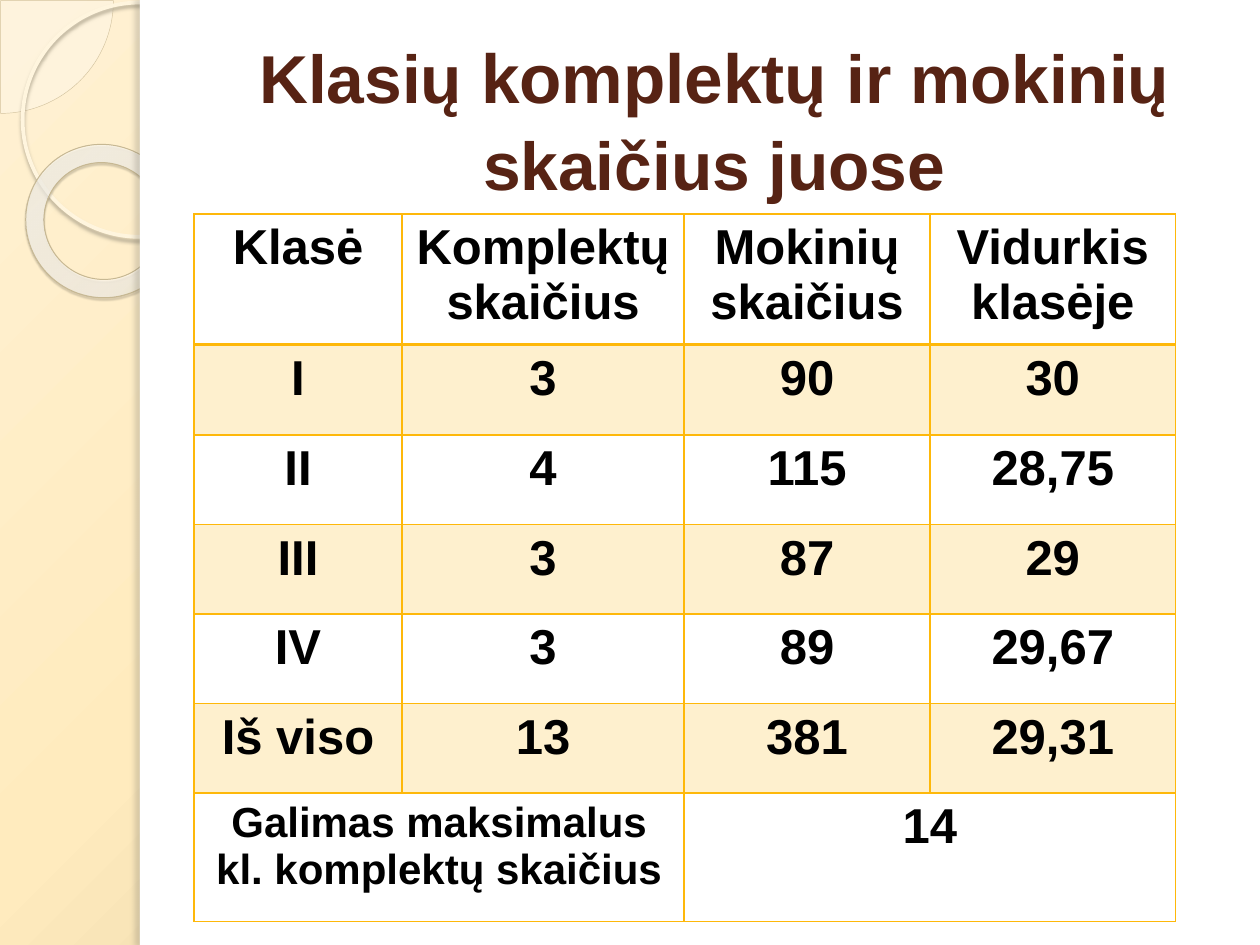
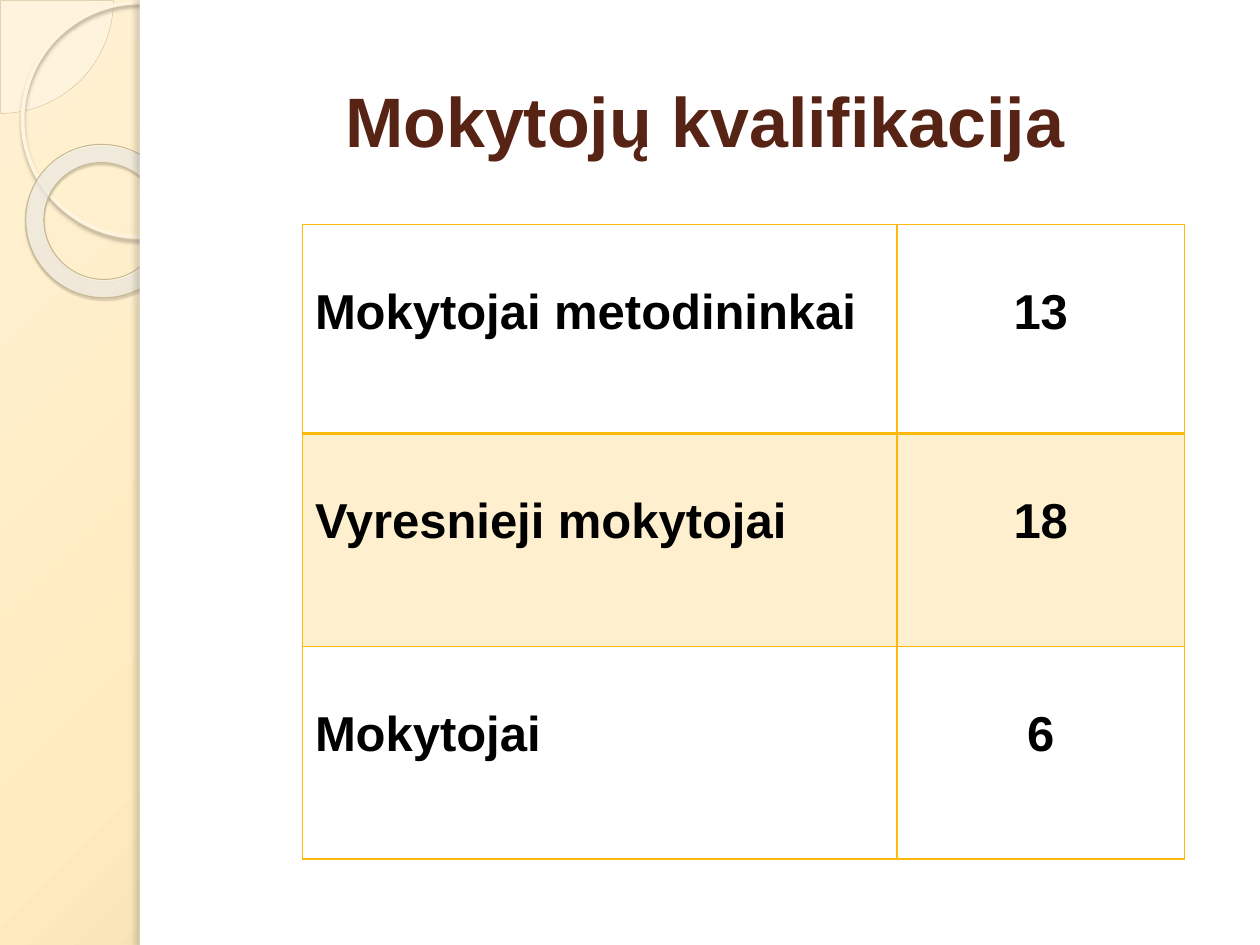
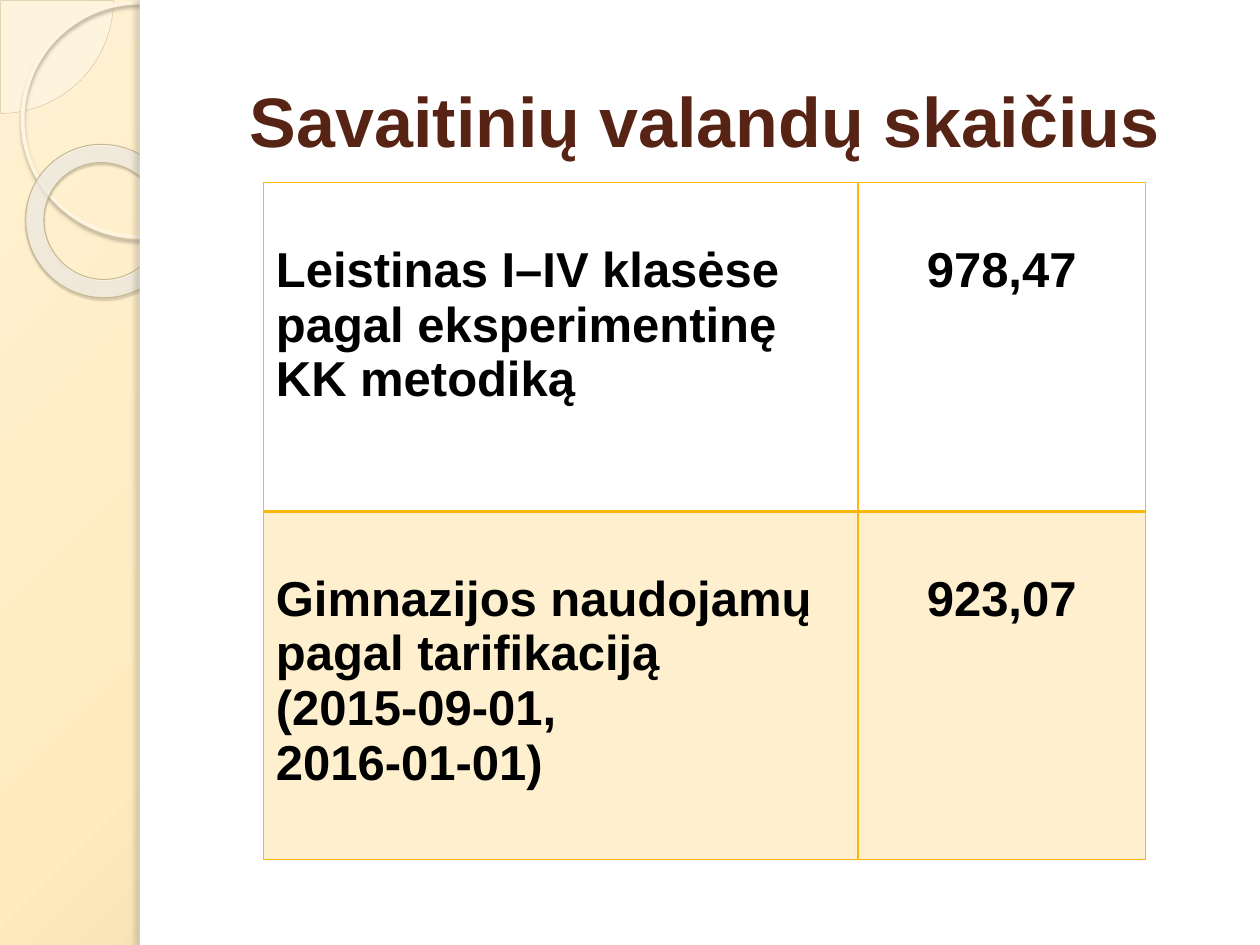
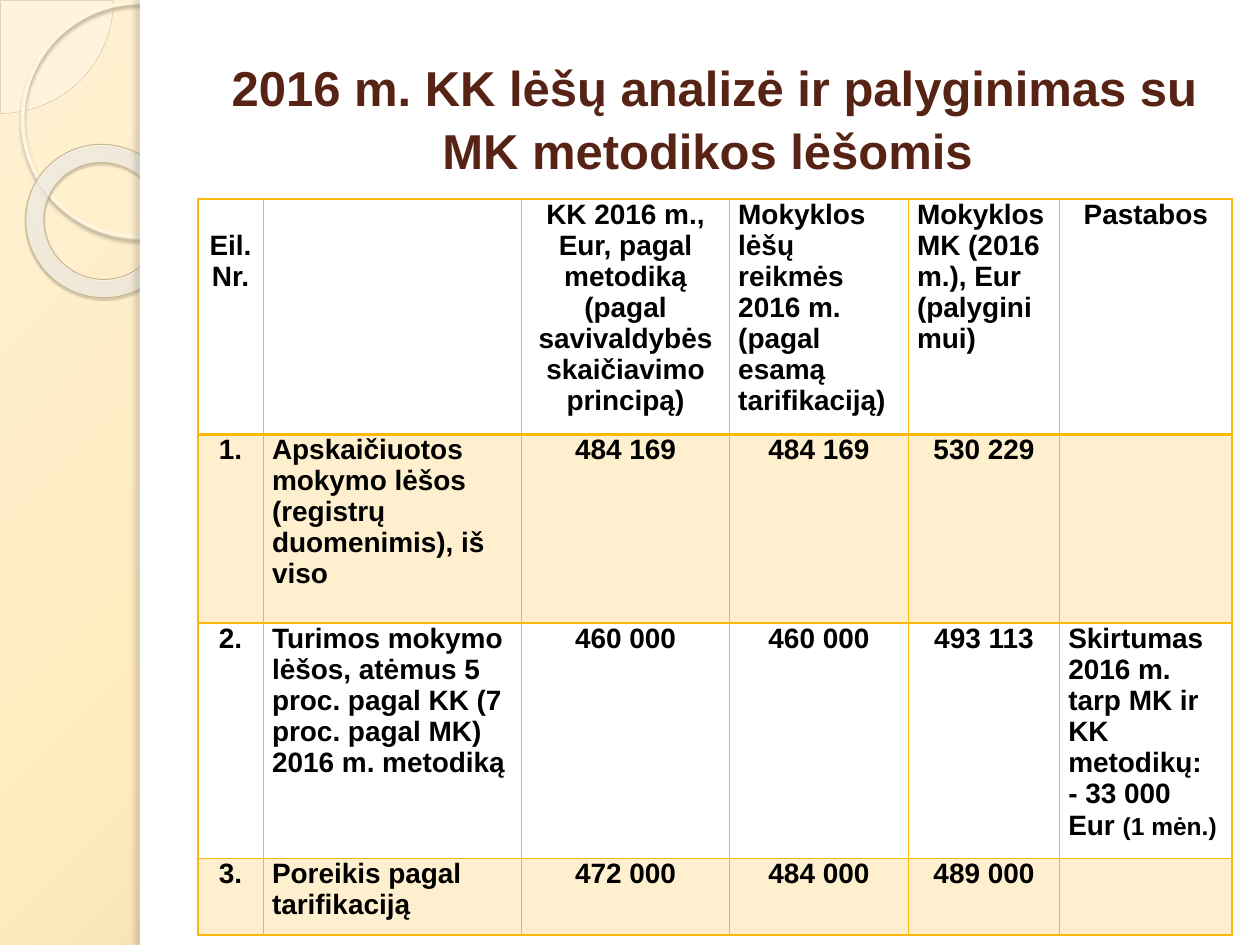
"""Build four school report slides, each a title over a table beside a decorated band."""
import pptx
import pptx.dml.color
import pptx.enum.shapes
import pptx.enum.text
import pptx.oxml
import pptx.oxml.ns
import pptx.util

RGBColor = pptx.dml.color.RGBColor
Inches = pptx.util.Inches
Pt = pptx.util.Pt
SHAPE = pptx.enum.shapes.MSO_SHAPE
qn = pptx.oxml.ns.qn

WIDTH, HEIGHT = 10, 7.5
BAND = 1.11
TITLE_BOX = (1.57, 0.3, 8.2, 1.25)
FONT = "Arial"
WHITE = RGBColor(0xFF, 0xFF, 0xFF)
BLACK = RGBColor(0x00, 0x00, 0x00)
BROWN = RGBColor(0x57, 0x23, 0x14)
AMBER = RGBColor(0xFE, 0xB8, 0x0A)
CREAM = RGBColor(0xFE, 0xFA, 0xF4)
SAND = RGBColor(0xD3, 0xC3, 0x9F)
PALE = RGBColor(0xFF, 0xF5, 0xDE)
KHAKI = RGBColor(0xC7, 0xB8, 0x93)
RING_SHADE = RGBColor(0xB0, 0xA6, 0x8F)
DONUT_SHADE = RGBColor(0x5A, 0x54, 0x44)
EDGE_SHADE = RGBColor(0x73, 0x6F, 0x63)

BACKGROUND = {
    "stops": [(0, RGBColor(0xFF, 0xF1, 0xD3), 100),
              (40, RGBColor(0xFF, 0xEB, 0xBE), 100),
              (100, RGBColor(0xC9, 0xB4, 0x84), 100)],
    "focus": (-24, -20, 124, 120),
}
DONUT_FILL = {
    "stops": [(0, RGBColor(0xFF, 0xFC, 0xF6), 70),
              (70, RGBColor(0xFF, 0xFE, 0xFB), 55),
              (100, RGBColor(0xF0, 0xD2, 0x8E), 60)],
    "focus": (-408, -50, 508, 150),
}
DECORATIONS = [
    {"kind": SHAPE.PIE, "box": (-0.89, -0.89, 1.79, 1.79), "adjust": (0, 54.02),
     "fill": CREAM, "alpha": 33, "line": (SAND, 0.25)},
    {"kind": SHAPE.OVAL, "box": (0.18, 0.02, 1.86, 1.86),
     "line": (PALE, 2.15), "shadow": (RING_SHADE, 85, 2, 2, 90)},
    {"kind": SHAPE.DONUT, "box": (0.2, 1.15, 1.23, 1.21), "adjust": (0.12,), "turn": 38.6,
     "fill": KHAKI, "gradient": DONUT_FILL, "line": (KHAKI, 0.58),
     "shadow": (DONUT_SHADE, 35, 1, 1.2, 75)},
    {"kind": SHAPE.RECTANGLE, "box": (BAND, 0, WIDTH - BAND, HEIGHT), "fill": WHITE},
    {"kind": SHAPE.RECTANGLE, "box": (BAND, 0, 0.08, HEIGHT), "fill": WHITE,
     "shadow": (EDGE_SHADE, 25, 3, 3, 180)},
]

SLIDES = [
    {"title": [("Klasių ", 38.7), ("komplektų", 39.6), (" ir mokinių skaičius juose", 38.7)],
     "corner": (1.54, 1.7), "columns": [1.65, 2.24, 1.95, 1.95],
     "rows": [1.02, 0.72] + [0.71] * 4 + [1.02],
     "align": "cccc", "size": 28, "insets": (0.1, 0.05),
     "special": {(6, 0): {"size": 24}}, "merges": [(6, 0, 1), (6, 2, 3)],
     "cells": [
         ("Klasė", "Komplektų\nskaičius", "Mokinių skaičius", "Vidurkis klasėje"),
         ("I", "3", "90", "30"),
         ("II", "4", "115", "28,75"),
         ("III", "3", "87", "29"),
         ("IV", "3", "89", "29,67"),
         ("Iš viso", "13", "381", "29,31"),
         ("Galimas maksimalus kl. komplektų skaičius", "", "14", ""),
     ]},
    {"title": [("Mokytojų kvalifikacija ", 40)],
     "corner": (2.4, 1.78), "columns": [4.72, 2.28], "rows": [1.66, 1.69, 1.69],
     "align": "lc", "size": 28, "insets": (0.1, 0.48),
     "cells": [
         ("Mokytojai metodininkai", "13"),
         ("Vyresnieji mokytojai", "18"),
         ("Mokytojai", "6"),
     ]},
    {"title": [("Savaitinių valandų skaičius ", 40)],
     "corner": (2.09, 1.45), "columns": [4.72, 2.28], "rows": [2.61, 2.76],
     "align": "lc", "size": 28, "insets": (0.1, 0.48),
     "cells": [
         ("Leistinas I–IV klasėse pagal eksperimentinę KK metodiką", "978,47"),
         ("Gimnazijos naudojamų pagal tarifikaciją\n(2015-09-01,\n2016-01-01)", "923,07"),
     ]},
    {"title": [("2016 m. KK lėšų analizė ir palyginimas su MK metodikos lėšomis ", 28)],
     "corner": (1.57, 1.58), "columns": [0.52, 2.05, 1.65, 1.42, 1.2, 1.37],
     "rows": [1.8, 1.5, 1.73, 0.61],
     "align": "clcccl", "header_align": "clcllc", "size": 16, "insets": (0.07, 0),
     "special": {(0, 0): {"top": 0.25}},
     "cells": [
         ("Eil. Nr.", "",
          "KK 2016 m.,\nEur, pagal metodiką\n(pagal savivaldybės skaičiavimo principą)",
          "Mokyklos lėšų reikmės 2016 m. (pagal esamą tarifikaciją)",
          "Mokyklos MK (2016 m.), Eur (palyginimui)", "Pastabos"),
         ("1.", "Apskaičiuotos mokymo lėšos (registrų duomenimis), iš viso",
          "484 169", "484 169", "530 229", ""),
         ("2.", "Turimos mokymo lėšos, atėmus 5 proc. pagal KK (7 proc. pagal MK) 2016 m. metodiką",
          "460 000", "460 000", "493 113",
          "Skirtumas 2016 m. tarp MK ir KK metodikų:\n- 33 000 Eur |(1 mėn.)"),
         ("3.", "Poreikis pagal tarifikaciją", "472 000", "484 000", "489 000", ""),
     ]},
]
NOTE_SIZE = 14
ALIGNMENTS = {"l": pptx.enum.text.PP_ALIGN.LEFT, "c": pptx.enum.text.PP_ALIGN.CENTER}


def add_element(parent, tag, **attributes):
    child = parent.makeelement(qn(tag), {name: str(value) for name, value in attributes.items()})
    parent.append(child)
    return child


def add_color(parent, color, alpha):
    add_element(add_element(parent, "a:srgbClr", val=color), "a:alpha", val=alpha * 1000)


def set_alpha(properties, alpha):
    add_element(properties.find(qn("a:solidFill"))[0], "a:alpha", val=alpha * 1000)


def set_gradient(properties, stops, focus):
    solid = properties.find(qn("a:solidFill"))
    gradient = solid.makeelement(qn("a:gradFill"), {"rotWithShape": "1"})
    stop_list = add_element(gradient, "a:gsLst")
    for position, color, alpha in stops:
        add_color(add_element(stop_list, "a:gs", pos=position * 1000), color, alpha)
    route = add_element(gradient, "a:path", path="circle")
    add_element(route, "a:fillToRect", **{side: share * 1000 for side, share in zip("ltrb", focus)})
    properties.replace(solid, gradient)


def add_shadow(properties, color, alpha, blur, distance, angle):
    shadow = add_element(properties.find(qn("a:effectLst")), "a:outerShdw",
                         blurRad=int(Pt(blur)), dist=int(Pt(distance)),
                         dir=angle * 60000, algn="ctr", rotWithShape=0)
    add_color(shadow, color, alpha)


def add_decoration(slide, look):
    shape = slide.shapes.add_shape(look["kind"], *map(Inches, look["box"]))
    shape.shadow.inherit = False
    shape.rotation = look.get("turn", 0)
    for index, value in enumerate(look.get("adjust", ())):
        shape.adjustments[index] = value
    properties = shape.element.spPr
    if "fill" in look:
        shape.fill.solid()
        shape.fill.fore_color.rgb = look["fill"]
    else:
        shape.fill.background()
    if "alpha" in look:
        set_alpha(properties, look["alpha"])
    if "gradient" in look:
        set_gradient(properties, **look["gradient"])
    if "line" in look:
        color, width = look["line"]
        shape.line.color.rgb = color
        shape.line.width = Pt(width)
    else:
        shape.line.fill.background()
    if "shadow" in look:
        add_shadow(properties, *look["shadow"])


def add_run(paragraph, text, size, color):
    run = paragraph.add_run()
    run.text = text
    for name, value in {"name": FONT, "size": Pt(size), "bold": True}.items():
        setattr(run.font, name, value)
    run.font.color.rgb = color


def add_title(slide, runs):
    frame = slide.shapes.add_textbox(*map(Inches, TITLE_BOX)).text_frame
    frame.word_wrap = True
    frame.vertical_anchor = pptx.enum.text.MSO_ANCHOR.MIDDLE
    paragraph = frame.paragraphs[0]
    paragraph.alignment = ALIGNMENTS["c"]
    paragraph.line_spacing = 1.07
    for text, size in runs:
        add_run(paragraph, text, size, BROWN)


def set_borders(cell, row):
    properties = cell._tc.get_or_add_tcPr()
    widths = {"L": 1, "R": 1, "T": 2 if row == 1 else 1, "B": 2 if row == 0 else 1}
    for index, (side, width) in enumerate(widths.items()):
        border = add_element(properties, f"a:ln{side}", w=int(Pt(width)))
        add_color(add_element(border, "a:solidFill"), AMBER, 100)
        properties.insert(index, border)


def fill_cell(cell, text, size, alignment):
    frame = cell.text_frame
    for index, line in enumerate(text.split("\n")):
        paragraph = frame.add_paragraph() if index else frame.paragraphs[0]
        paragraph.alignment = ALIGNMENTS[alignment]
        for position, part in enumerate(line.split("|")):
            if part:
                add_run(paragraph, part, NOTE_SIZE if position else size, BLACK)


def add_table(slide, page):
    columns, rows = page["columns"], page["rows"]
    box = (*page["corner"], sum(columns), sum(rows))
    table = slide.shapes.add_table(len(rows), len(columns), *map(Inches, box)).table
    table.first_row = table.horz_banding = False
    for column, width in zip(table.columns, columns):
        column.width = Inches(width)
    for row, height in zip(table.rows, rows):
        row.height = Inches(height)
    side, top = page["insets"]
    for row, texts in enumerate(page["cells"]):
        alignments = page.get("header_align", page["align"]) if row == 0 else page["align"]
        for column, text in enumerate(texts):
            cell = table.cell(row, column)
            special = page.get("special", {}).get((row, column), {})
            margins = {"left": side, "right": side,
                       "top": special.get("top", top), "bottom": min(top, 0.05)}
            for name, value in margins.items():
                setattr(cell, f"margin_{name}", Inches(value))
            fill_cell(cell, text, special.get("size", page["size"]), alignments[column])
            if row % 2:
                cell.fill.solid()
                cell.fill.fore_color.rgb = AMBER
                set_alpha(cell._tc.tcPr, 20)
            else:
                cell.fill.background()
            set_borders(cell, row)
    for row, first, last in page.get("merges", ()):
        table.cell(row, first).merge(table.cell(row, last))


def main():
    presentation = pptx.Presentation()
    presentation.slide_width, presentation.slide_height = Inches(WIDTH), Inches(HEIGHT)
    for page in SLIDES:
        slide = presentation.slides.add_slide(presentation.slide_layouts[6])
        slide.background.fill.solid()
        slide.background.fill.fore_color.rgb = PALE
        set_gradient(slide.element.xpath(".//p:bgPr")[0], **BACKGROUND)
        for look in DECORATIONS:
            add_decoration(slide, look)
        add_title(slide, page["title"])
        add_table(slide, page)
    presentation.save("out.pptx")


if __name__ == "__main__":
    main()
